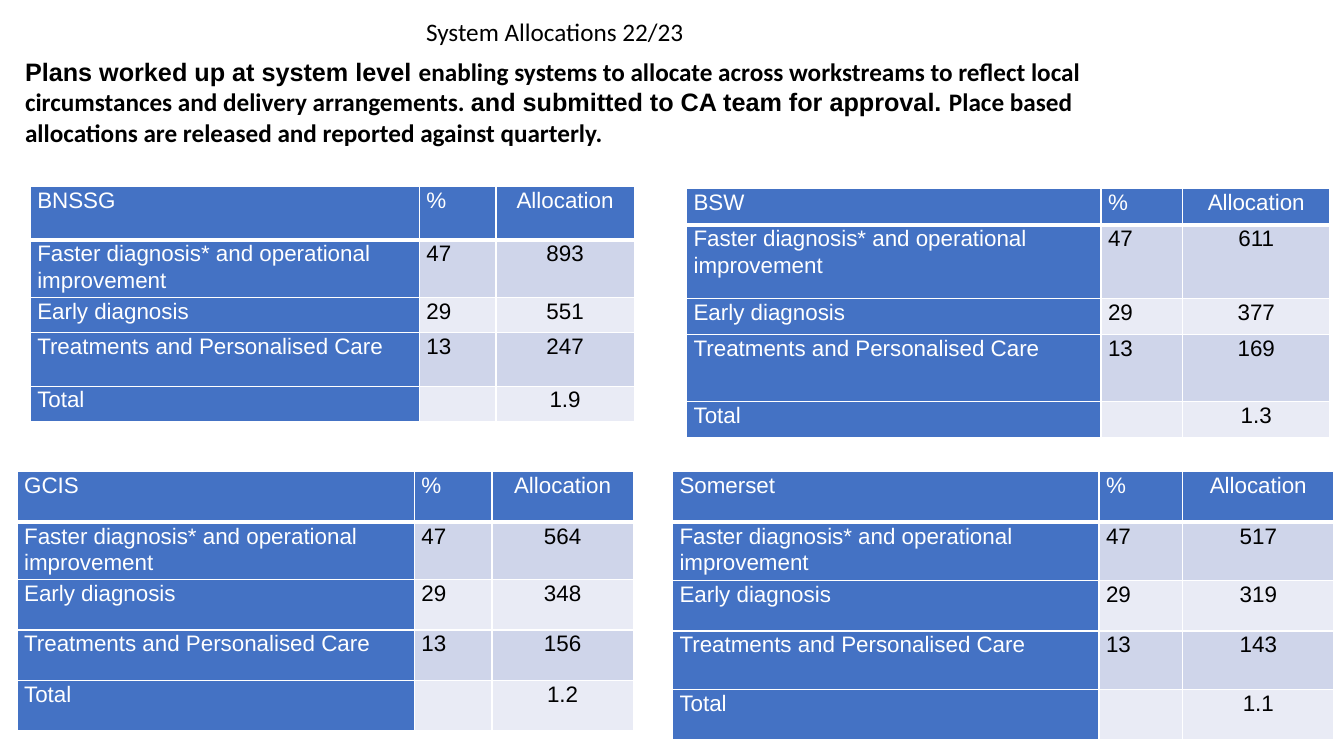
from dataclasses import dataclass

from lxml import etree
from pptx import Presentation
from pptx.dml.color import RGBColor
from pptx.enum import text
from pptx.oxml import ns
from pptx.util import Inches, Pt

BLUE = RGBColor(0x44, 0x72, 0xC4)
BAND = RGBColor(0xCF, 0xD5, 0xEA)
PALE = RGBColor(0xE9, 0xEB, 0xF5)
WHITE = RGBColor(0xFF, 0xFF, 0xFF)
BLACK = RGBColor(0, 0, 0)

LABELS = ["Faster diagnosis* and operational improvement", "Early diagnosis",
          "Treatments and Personalised Care", "Total"]
SHARES = ["47", "29", "13", ""]


@dataclass
class Plan:
    name: str
    left: float
    top: float
    cols: list[float]
    rows: list[float]
    sums: list[str]


PLANS = [
    Plan("BNSSG", 0.3, 1.85, [3.86, 0.76, 1.37],
         [0.53, 0.53, 0.35, 0.53, 0.35], ["893", "551", "247", "1.9"]),
    Plan("BSW", 6.81, 1.87, [4.11, 0.81, 1.46],
         [0.36, 0.73, 0.36, 0.66, 0.36], ["611", "377", "169", "1.3"]),
    Plan("GCIS", 0.17, 4.68, [3.94, 0.77, 1.4],
         [0.5] * 5, ["564", "348", "156", "1.2"]),
    Plan("Somerset", 6.67, 4.68, [4.23, 0.83, 1.5],
         [0.5, 0.58, 0.5, 0.58, 0.5], ["517", "319", "143", "1.1"]),
]


def add_run(para, words: str, font: str, size: int, color: RGBColor,
            bold: bool = False) -> None:
    run = para.add_run()
    run.text = words
    run.font.name = font
    run.font.size = Pt(size)
    run.font.bold = bold
    run.font.color.rgb = color


def add_box(slide, left: float, top: float, width: float, height: float):
    box = slide.shapes.add_textbox(Inches(left), Inches(top),
                                   Inches(width), Inches(height))
    box.text_frame.word_wrap = True
    return box.text_frame


def set_edges(cell, head: bool) -> None:
    """White cell borders, heavier under the header row."""
    props = cell._tc.get_or_add_tcPr()
    for spot, side in enumerate("LRTB"):
        width = 3 if head and side == "B" else 1
        line = etree.Element(ns.qn(f"a:ln{side}"), w=str(Pt(width)))
        fill = etree.SubElement(line, ns.qn("a:solidFill"))
        etree.SubElement(fill, ns.qn("a:srgbClr"), val=str(WHITE))
        props.insert(spot, line)


def fill_cell(cell, words: str, row: int, col: int) -> None:
    dark = row == 0 or col == 0
    cell.margin_left = cell.margin_right = Inches(0.07)
    cell.margin_top = cell.margin_bottom = 0
    cell.fill.solid()
    cell.fill.fore_color.rgb = BLUE if dark else BAND if row % 2 else PALE
    set_edges(cell, row == 0)
    para = cell.text_frame.paragraphs[0]
    para.line_spacing = 1.07
    para.space_after = Pt(8)
    if col == 2:
        para.alignment = text.PP_ALIGN.CENTER
    if words:
        add_run(para, words, "Arial", 16, WHITE if dark else BLACK)


def add_plan(slide, plan: Plan) -> None:
    grid = [(plan.name, "%", "Allocation"), *zip(LABELS, SHARES, plan.sums)]
    table = slide.shapes.add_table(
        len(plan.rows), len(plan.cols), Inches(plan.left), Inches(plan.top),
        Inches(sum(plan.cols)), Inches(sum(plan.rows))).table
    for col, width in zip(table.columns, plan.cols):
        col.width = Inches(width)
    for row, height in zip(table.rows, plan.rows):
        row.height = Inches(height)
    for r, line in enumerate(grid):
        for c, words in enumerate(line):
            fill_cell(table.cell(r, c), words, r, c)


def main() -> None:
    deck = Presentation()
    deck.slide_width, deck.slide_height = Inches(13.33), Inches(7.5)
    slide = deck.slides.add_slide(deck.slide_layouts[6])

    # Title
    frame = add_box(slide, 0, 0.15, 11.06, 0.37)
    frame.vertical_anchor = text.MSO_ANCHOR.BOTTOM
    para = frame.paragraphs[0]
    para.alignment = text.PP_ALIGN.CENTER
    para.line_spacing = 0.9
    add_run(para, "System Allocations 22/23 ", "Calibri", 18, BLACK)

    # System tables
    for plan in PLANS:
        add_plan(slide, plan)

    # Introduction
    para = add_box(slide, 0.15, 0.51, 11.58, 1.31).paragraphs[0]
    for words, font in [
        ("Plans worked up at system level ", "Arial"),
        ("enabling systems to allocate across workstreams to reflect local "
         "circumstances and delivery arrangements. ", "Calibri"),
        ("and submitted to CA team for approval. ", "Arial"),
        ("Place based allocations are released and reported against "
         "quarterly.", "Calibri"),
    ]:
        add_run(para, words, font, 18, BLACK, bold=True)

    deck.save("out.pptx")


if __name__ == "__main__":
    main()
